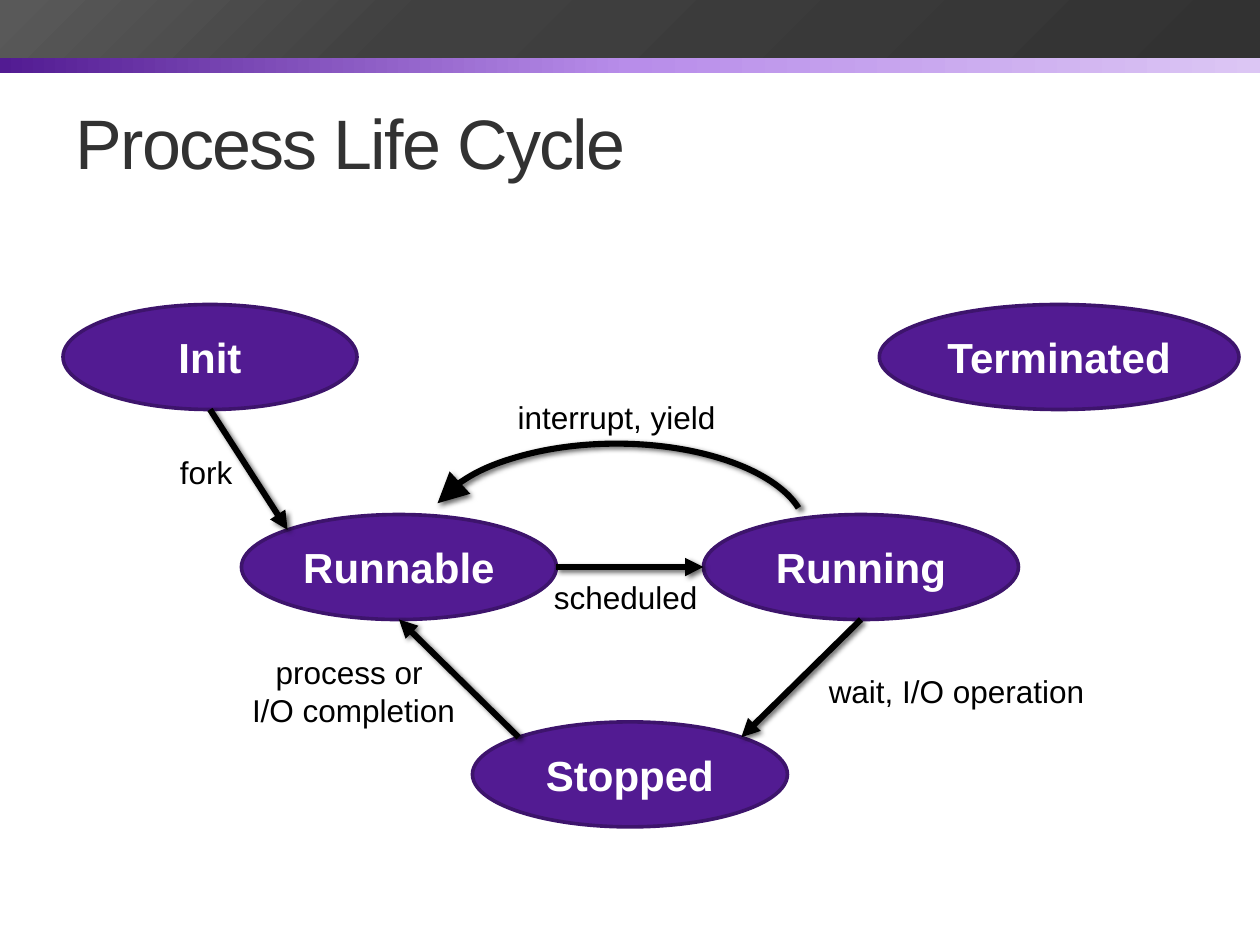
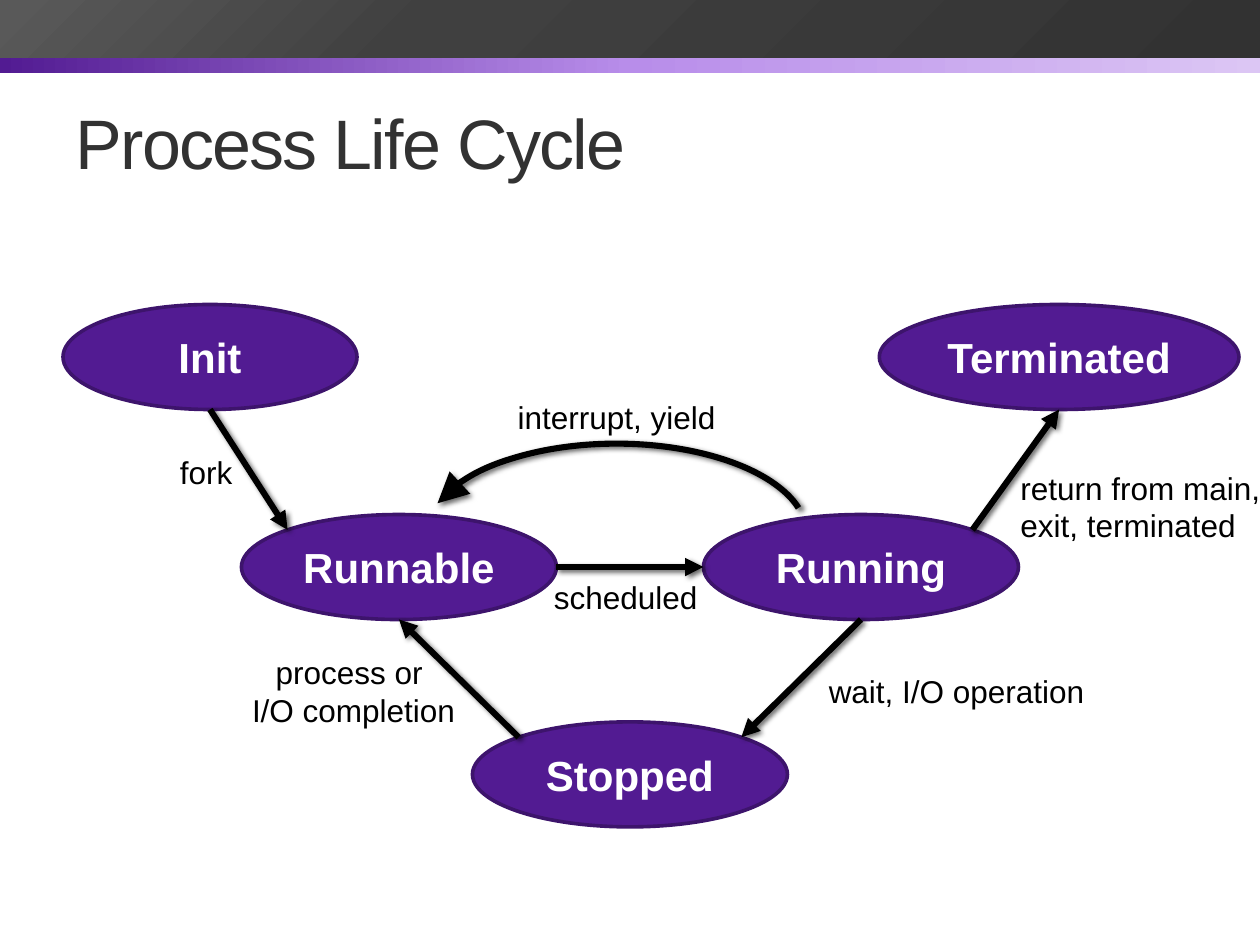
from copy import deepcopy

from lxml import etree
from pptx import Presentation
from pptx import util as u
from pptx.dml.color import RGBColor
from pptx.enum import shapes, text
from pptx.oxml.ns import qn

PURPLE, DARK_PURPLE = "521B92", "3D146C"
CHARCOAL, BLACK, WHITE = "323232", "000000", "FFFFFF"
FONT = "Arial"
SLIDE_WIDTH, SLIDE_HEIGHT = 720, 540
TITLE_BOX = (36, 42, 648, 77.5)
DIAGRAM_BOX = (36, 174, 672, 298.5)

STATES = {
    "Init": (0, 0, 168),
    "Runnable": (102, 120, 180),
    "Running": (366, 120, 180),
    "Terminated": (466.5, 0, 205.5),
    "Stopped": (234, 238.5, 180),
}
STATE_HEIGHT = 60
DIAGONAL = 0.1464
ELLIPSE_SITES = {
    "top": (0, 0.5, 0),
    "top left": (1, DIAGONAL, DIAGONAL),
    "left": (2, 0, 0.5),
    "bottom": (4, 0.5, 1),
    "right": (6, 1, 0.5),
    "top right": (7, 1 - DIAGONAL, DIAGONAL),
}

FORK = (("Init", "bottom"), ("Runnable", "top left"), "fork", (59.75, 81.5, 44.5))
SCHEDULED = (("Runnable", "right"), ("Running", "left"), "scheduled", (273.5, 153, 97))
EXIT = (("Running", "top right"), ("Terminated", "bottom"),
        "return from main,\nexit, terminated", (540, 90.25, 152.5))
WAIT = (("Running", "bottom"), ("Stopped", "top right"),
        "wait, I/O operation", (430.5, 206.25, 162))
COMPLETION = (("Stopped", "top left"), ("Runnable", "bottom"),
              "process or \nI/O completion", (100, 195.5, 132))
ARC_BOX = (207.5, 79.5, 217.5, 103.5)
ARC_ANGLES = (189.81, 351.77)


def color(value):
    return RGBColor.from_string(value)


def points(*values):
    return [u.Pt(value) for value in values]


def format_text(frame, size, hex_color, bold=False, alignment=None):
    for paragraph in frame.paragraphs:
        paragraph.alignment = alignment
        for run in paragraph.runs:
            run.font.name = FONT
            run.font.size = u.Pt(size)
            run.font.bold = bold
            run.font.color.rgb = color(hex_color)


def add_element(parent, tag, **attributes):
    element = etree.SubElement(parent, qn(tag))
    for name, value in attributes.items():
        element.set(name, str(value))
    return element


def add_band(slide, box, stops, angle):
    band = slide.shapes.add_shape(shapes.MSO_SHAPE.RECTANGLE, *points(*box))
    band.shadow.inherit = False
    band.line.fill.background()
    band.fill.gradient()
    band.fill.gradient_angle = angle
    stop_list = band.element.find(".//" + qn("a:gsLst"))
    stop_list.append(deepcopy(stop_list[0]))
    for stop, (position, value) in zip(band.fill.gradient_stops, stops):
        stop.position = position
        stop.color.rgb = color(value)
    return band


def add_master_bands(presentation, slide):
    purple = add_band(slide, (0, 17.5, SLIDE_WIDTH, 24.25),
                      ((0, PURPLE), (0.5, "B88DEA"), (1, "DCC6F4")), 0)
    dark = add_band(slide, (0, 0, SLIDE_WIDTH, 33),
                    ((0, CHARCOAL), (0.66, "404040"), (0.99, "595959")), 135)
    master_tree = presentation.slide_master.shapes.element
    for index, band in enumerate((purple, dark), start=2):
        master_tree.insert(index, band.element)


def fill_title(slide, box, wording):
    title = slide.shapes.title
    title.left, title.top, title.width, title.height = points(*box)
    frame = title.text_frame
    frame.text = wording
    frame.vertical_anchor = text.MSO_ANCHOR.MIDDLE
    format_text(frame, 40, CHARCOAL, alignment=text.PP_ALIGN.LEFT)
    frame.paragraphs[0].runs[0].font._element.set("spc", "-100")


def add_state(slide, name, box):
    state = slide.shapes.add_shape(shapes.MSO_SHAPE.OVAL, *points(*box))
    state.shadow.inherit = False
    state.fill.solid()
    state.fill.fore_color.rgb = color(PURPLE)
    state.line.color.rgb = color(DARK_PURPLE)
    state.line.width = u.Pt(2.08)
    frame = state.text_frame
    frame.text = name
    frame.word_wrap = True
    frame.vertical_anchor = text.MSO_ANCHOR.MIDDLE
    format_text(frame, 24, WHITE, True, text.PP_ALIGN.CENTER)
    return state


def style_arrow(arrow, end_tag, size):
    arrow.line.color.rgb = color(BLACK)
    arrow.line.width = u.Pt(3.5)
    properties = arrow.element.spPr
    add_element(properties.find(qn("a:ln")), end_tag, type="triangle", w=size, len=size)
    effects = add_element(properties, "a:effectLst")
    shadow = add_element(effects, "a:outerShdw", blurRad=u.Pt(3), dist=u.Pt(2),
                         dir=45 * 60000, algn="tl", rotWithShape=0)
    shadow_color = add_element(shadow, "a:srgbClr", val=BLACK)
    add_element(shadow_color, "a:alpha", val=60000)


def add_label(group, wording, left, top, width, alignment=None):
    height = 28.8 if "\n" not in wording else 51
    label = group.shapes.add_textbox(*points(left, top, width, height))
    frame = label.text_frame
    frame.text = wording
    frame.word_wrap = False
    frame.auto_size = text.MSO_AUTO_SIZE.SHAPE_TO_FIT_TEXT
    format_text(frame, 18, BLACK, alignment=alignment)


def site_of(state, site):
    index, across, down = ELLIPSE_SITES[site]
    x = round(state.left + across * state.width)
    y = round(state.top + down * state.height)
    return index, x, y


def add_transition(slide, states, origin, transition):
    (source, source_site), (target, target_site), wording, (x, y, width) = transition
    start_index, *start = site_of(states[source], source_site)
    end_index, *end = site_of(states[target], target_site)
    group = slide.shapes.add_group_shape()
    arrow = group.shapes.add_connector(shapes.MSO_CONNECTOR.STRAIGHT, *start, *end)
    style_arrow(arrow, "a:tailEnd", "med")
    joints = arrow.element.find(".//" + qn("p:cNvCxnSpPr"))
    add_element(joints, "a:stCxn", id=states[source].shape_id, idx=start_index)
    add_element(joints, "a:endCxn", id=states[target].shape_id, idx=end_index)
    alignment = text.PP_ALIGN.CENTER if transition is COMPLETION else None
    add_label(group, wording, origin[0] + x, origin[1] + y, width, alignment)


def add_interrupt(slide, origin):
    left, top = origin
    x, y, width, height = ARC_BOX
    group = slide.shapes.add_group_shape()
    arc = group.shapes.add_shape(shapes.MSO_SHAPE.ARC,
                                 *points(left + x, top + y, width, height))
    for index, angle in enumerate(ARC_ANGLES):
        arc.adjustments[index] = angle * 0.6
    arc.fill.background()
    style_arrow(arc, "a:headEnd", "lg")
    add_label(group, "interrupt, yield", left + 252.75, top + 50, 129)


def add_life_cycle(slide, box, transitions):
    left, top = origin = box[:2]
    states = {name: add_state(slide, name, (left + x, top + y, width, STATE_HEIGHT))
              for name, (x, y, width) in STATES.items()}
    for transition in (FORK, SCHEDULED):
        add_transition(slide, states, origin, transition)
    add_interrupt(slide, origin)
    for transition in transitions:
        add_transition(slide, states, origin, transition)


def main():
    presentation = Presentation()
    presentation.slide_width, presentation.slide_height = points(SLIDE_WIDTH, SLIDE_HEIGHT)
    title_only = presentation.slide_layouts[5]
    for transitions in ((WAIT, COMPLETION), (EXIT, WAIT, COMPLETION)):
        slide = presentation.slides.add_slide(title_only)
        fill_title(slide, TITLE_BOX, "Process Life Cycle")
        add_life_cycle(slide, DIAGRAM_BOX, transitions)
    add_master_bands(presentation, slide)
    presentation.save("out.pptx")


if __name__ == "__main__":
    main()
